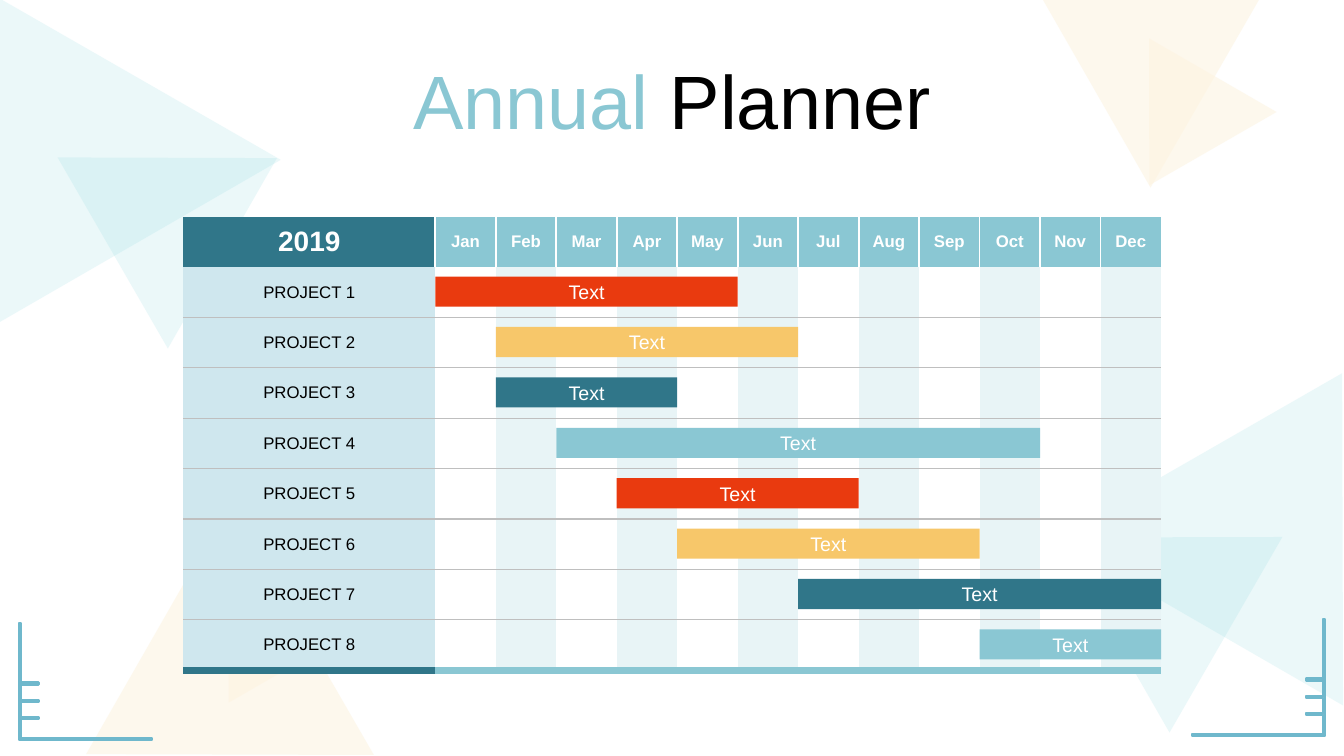
from lxml.etree import SubElement as Sub
from pptx import Presentation
from pptx.dml.color import RGBColor as RGB
from pptx.enum.shapes import MSO_SHAPE as Form
from pptx.enum.text import MSO_ANCHOR as Anchor, MSO_AUTO_SIZE as Fit, PP_ALIGN as Align
from pptx.oxml.ns import qn
from pptx.util import Cm, Pt

HEX = {
    "teal": "307689", "sky": "8AC7D3", "pale": "CFE7EE", "mist": "E8F4F6",
    "white": "FFFFFF", "black": "000000", "gray": "BFBFBF", "red": "E93A0F",
    "gold": "F7C76A", "mint": "85D8DE", "cream": "FDF4E1", "ruler": "6FB8CC",
}
MONTHS = "Jan Feb Mar Apr May Jun Jul Aug Sep Oct Nov Dec".split()
LEFT, TOP, ROW, LABEL = 4.62, 5.46, 1.27, 6.35
MONTH = (24.64 - LABEL) / len(MONTHS)
NO_STYLE = "{2D5ABB26-0587-4C30-8999-92F81FD0307C}"

# first month (0 = Jan), number of months, colour; one bar per project
BARS = [
    (0, 5, "red"), (1, 5, "gold"), (1, 3, "teal"), (2, 8, "sky"),
    (3, 4, "red"), (4, 5, "gold"), (6, 6, "teal"), (9, 3, "sky"),
]
# left, top, width, height, rotation, colour, opacity in percent
TRIANGLES = [
    (-2.34, -0.51, 8.2, 7.06, 330, "mint", 16),
    (2.13, 2.79, 5.56, 4.78, 60, "mint", 16),
    (27.81, 8.92, 8.41, 7.24, 30, "mint", 16),
    (25.93, 12.32, 5.69, 4.9, 300, "mint", 16),
    (1.24, 14.3, 7.29, 6.27, 240, "cream", 60),
    (4.37, 12.52, 4.93, 4.24, 330, "cream", 60),
    (25.58, -1.19, 5.49, 4.72, 300, "cream", 60),
    (27.91, 1.68, 3.71, 3.2, 210, "cream", 60),
]


def rgb(name):
    return RGB.from_string(HEX[name])


def paint(fill, name):
    fill.solid()
    fill.fore_color.rgb = rgb(name)


def add_run(para, text, size, color, bold=False):
    para.alignment = Align.CENTER
    run = para.add_run()
    run.text = text
    font = run.font
    font.name, font.size, font.bold = "Arial", Pt(size), bold
    font.color.rgb = rgb(color)


def add_form(slide, form, box, color):
    shape = slide.shapes.add_shape(form, *map(Cm, box))
    shape.shadow.inherit = False
    paint(shape.fill, color)
    shape.line.fill.background()
    return shape


def add_triangle(slide, box, turn, color, alpha):
    shape = add_form(slide, Form.ISOSCELES_TRIANGLE, box, color)
    shape.rotation = turn
    tint = shape.element.spPr.find(qn("a:solidFill"))[0]
    Sub(tint, qn("a:alpha"), val=str(alpha * 1000))


def add_ruler(slide, flip):
    """Draw the corner ruler at lower left, or mirrored at lower right."""
    thick, edge, tip, end, base = 0.05, 0.48, 0.97, 3.84, 18.6
    inner = edge + thick
    points = [(edge, 15.7), (inner, 15.7)]
    for tick in (17.2, 17.63, 18.06):
        points += [(inner, tick), (tip, tick),
                   (tip, tick + thick), (inner, tick + thick)]
    points += [(inner, base), (end, base), (end, base + thick), (edge, base + thick)]
    if flip:
        points = [(33.88 - x, y - 0.1) for x, y in points]
    points = [(Cm(x), Cm(y)) for x, y in points]
    pen = slide.shapes.build_freeform(*points[0], scale=1.0)
    pen.add_line_segments(points[1:], close=True)
    shape = pen.convert_to_shape()
    shape.shadow.inherit = False
    paint(shape.fill, "ruler")
    paint(shape.line.fill, "ruler")
    shape.line.width = Pt(1.5)
    Sub(shape.element.spPr.find(qn("a:ln")), qn("a:round"))


def set_title(slide):
    title = slide.shapes.title
    title.left, title.top, title.width, title.height = map(Cm, (3.18, 1.22, 27.51, 2.57))
    frame = title.text_frame
    frame.auto_size, frame.vertical_anchor = Fit.NONE, Anchor.MIDDLE
    add_run(frame.paragraphs[0], "Annual", 54, "sky")
    add_run(frame.paragraphs[0], " Planner", 54, "black")
    slide.shapes.element.append(title.element)


def set_cell(cell, color, edges):
    """Fill a cell; edges maps L, R, T, B, in that order, to colour and points."""
    props = cell._tc.get_or_add_tcPr()
    for side, (name, width) in edges.items():
        line = Sub(props, qn("a:ln" + side), w=str(Pt(width)))
        Sub(Sub(line, qn("a:solidFill")), qn("a:srgbClr"), val=HEX[name])
    paint(cell.fill, color)
    cell.margin_left = cell.margin_right = cell.margin_top = cell.margin_bottom = 0
    cell.vertical_anchor = Anchor.MIDDLE


def fill_head(table):
    for col, text in enumerate(["2019"] + MONTHS):
        cell = table.cell(0, col)
        edges = {}
        if col > 0:
            edges["L"] = ("white", 1.5)
        if col < len(MONTHS):
            edges["R"] = ("white", 1.5)
        set_cell(cell, "sky" if col else "teal", edges)
        add_run(cell.text_frame.paragraphs[0], text, 12 if col else 20, "white", True)


def fill_row(table, row):
    for col in range(len(MONTHS) + 1):
        cell = table.cell(row, col)
        edges = {"T": ("gray", 1)} if row > 1 else {}
        edges["B"] = ("gray", 1)
        if row == len(BARS):
            edges["B"] = ("sky" if col else "teal", 6)
        color = ("mist", "white")[col % 2] if col else "pale"
        set_cell(cell, color, edges)
    add_run(table.cell(row, 0).text_frame.paragraphs[0], f"PROJECT {row}", 12, "black")


def add_grid(slide):
    rows, cols = len(BARS) + 1, len(MONTHS) + 1
    box = (LEFT, TOP, LABEL + MONTH * len(MONTHS), ROW * rows)
    frame = slide.shapes.add_table(rows, cols, *map(Cm, box))
    frame.element.xpath(".//a:tableStyleId")[0].text = NO_STYLE
    table = frame.table
    table.first_row = table.horz_banding = False
    for i, col in enumerate(table.columns):
        col.width = Cm(MONTH if i else LABEL)
    for row in table.rows:
        row.height = Cm(ROW)
    fill_head(table)
    for i in range(1, rows):
        fill_row(table, i)


def add_bar(slide, row, start, span, color):
    box = (LEFT + LABEL + MONTH * start, TOP + ROW * row + 0.24, MONTH * span, 0.76)
    frame = add_form(slide, Form.RECTANGLE, box, color).text_frame
    frame.vertical_anchor = Anchor.MIDDLE
    add_run(frame.paragraphs[0], "Text", 14, "white")


def main():
    deck = Presentation()
    deck.slide_width, deck.slide_height = Cm(33.87), Cm(19.05)
    slide = deck.slides.add_slide(deck.slide_layouts[5])
    for *box, turn, color, alpha in TRIANGLES:
        add_triangle(slide, box, turn, color, alpha)
    for flip in (False, True):
        add_ruler(slide, flip)
    set_title(slide)
    add_grid(slide)
    for row, bar in enumerate(BARS, 1):
        add_bar(slide, row, *bar)
    deck.save("out.pptx")


if __name__ == "__main__":
    main()
